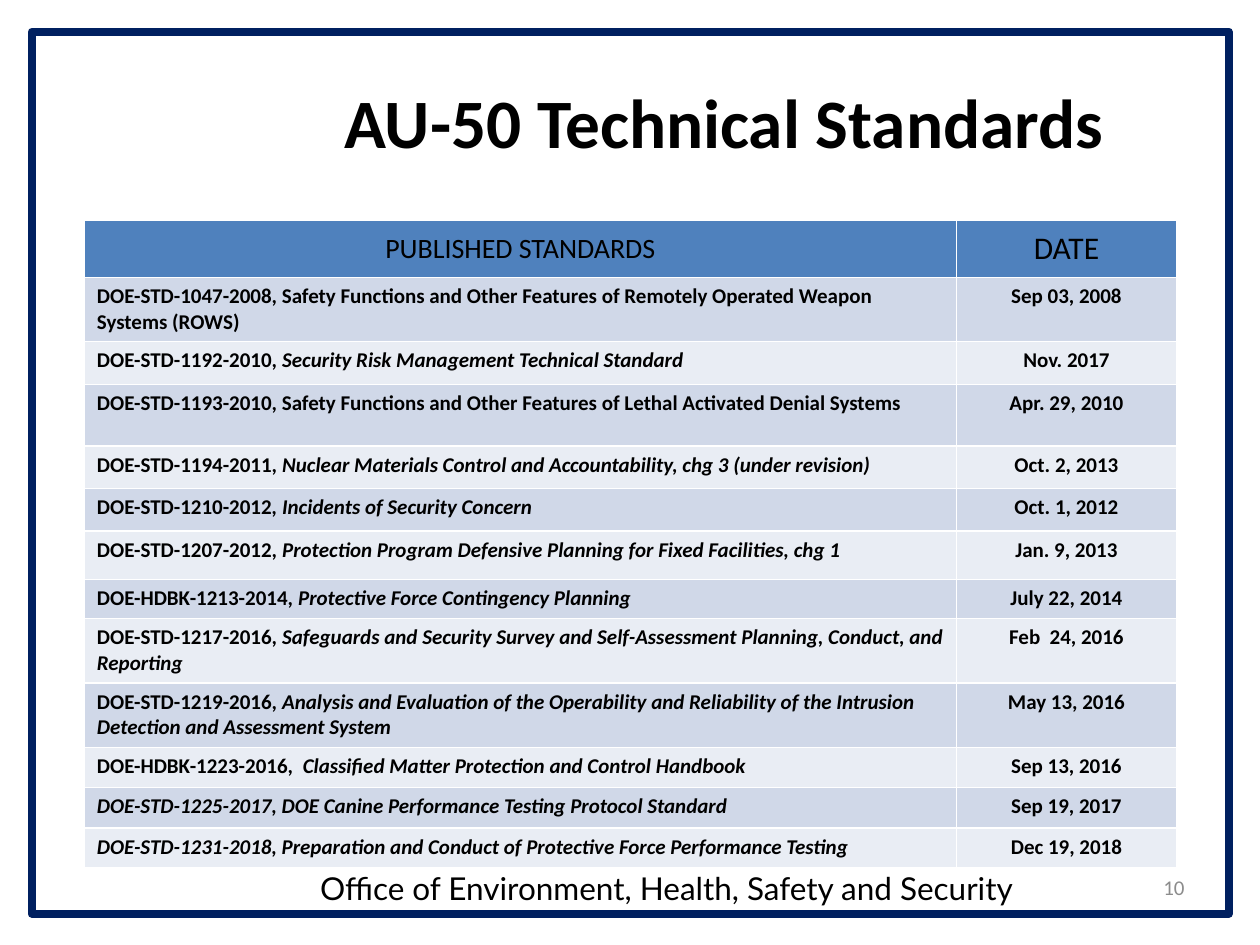
from dataclasses import dataclass

from pptx import Presentation, util as u
from pptx.dml.color import RGBColor
from pptx.enum import shapes, text

# Content
TITLE = "AU-50 Technical Standards"
FOOTER = "Office of Environment, Health, Safety and Security"
PAGE_NUMBER = "10"
HEADINGS = ("PUBLISHED STANDARDS", "DATE")
# Upright text, italic text, date, row height in cm
STANDARDS = [
    ("DOE-STD-1047-2008, Safety Functions and Other Features of Remotely Operated Weapon Systems (ROWS)",
     "", "Sep 03, 2008", 1.3),
    ("DOE-STD-1192-2010, ", "Security Risk Management Technical Standard", "Nov. 2017", 0.86),
    ("DOE-STD-1193-2010, Safety Functions and Other Features of Lethal Activated Denial Systems",
     "", "Apr. 29, 2010", 1.24),
    ("DOE-STD-1194-2011, ", "Nuclear Materials Control and Accountability, chg 3 (under revision)",
     "Oct. 2, 2013", 0.86),
    ("DOE-STD-1210-2012", ", Incidents of Security Concern", "Oct. 1, 2012", 0.86),
    ("DOE-STD-1207-2012, ", "Protection Program Defensive Planning for Fixed Facilities, chg 1",
     "Jan. 9, 2013", 0.97),
    ("DOE-HDBK-1213-2014, ", "Protective Force Contingency Planning", "July 22, 2014", 0.79),
    ("DOE-STD-1217-2016, ",
     "Safeguards and Security Survey and Self-Assessment Planning, Conduct, and Reporting",
     "Feb  24, 2016", 1.3),
    ("DOE-STD-1219-2016, ",
     "Analysis and Evaluation of the Operability and Reliability of the Intrusion "
     "Detection and Assessment System", "May 13, 2016", 1.3),
    ("DOE-HDBK-1223-2016,  ", "Classified Matter Protection and Control Handbook", "Sep 13, 2016", 0.81),
    ("", "DOE-STD-1225-2017, DOE Canine Performance Testing Protocol Standard", "Sep 19, 2017", 0.81),
    ("", "DOE-STD-1231-2018, Preparation and Conduct of Protective Force Performance Testing",
     "Dec 19, 2018", 0.81),
]
HEADER_HEIGHT = 1.14
COLUMN_WIDTHS = (17.58, 4.44)


@dataclass(frozen=True)
class Theme:
    body_font: str = "Calibri"
    footer_font: str = "Lato"
    ink: str = "000000"
    muted: str = "8C8C8C"
    frame: str = "002060"
    header: str = "4F81BD"
    bands: tuple = ("D0D8E8", "E9EDF4")
    title_size: float = 39.6
    footer_size: int = 18
    heading_sizes: tuple = (16, 18)
    small_size: int = 12


THEME = Theme()
ALIGN = text.PP_ALIGN
ANCHOR = text.MSO_ANCHOR


def cm(*lengths):
    return [u.Cm(length) for length in lengths]


def write(para, spans, size, align=ALIGN.CENTER, bold=False, color=THEME.ink, name=THEME.body_font):
    """Fill a paragraph with (words, italic) spans in one style."""
    para.alignment = align
    for words, italic in spans:
        if words:
            span = para.add_run()
            span.text = words
            if italic:
                span.font.italic = True
    font = para.font
    font.name, font.size, font.bold = name, u.Pt(size), bold
    font.color.rgb = RGBColor.from_string(color)


def add_label(page, place, words, size, anchor, **style):
    frame = page.shapes.add_textbox(*cm(*place)).text_frame
    frame.word_wrap = True
    frame.vertical_anchor = anchor
    write(frame.paragraphs[0], [(words, False)], size, **style)


def fill_cell(cell, color, spans, size, anchor=ANCHOR.TOP, **style):
    cell.fill.solid()
    cell.fill.fore_color.rgb = RGBColor.from_string(color)
    cell.vertical_anchor = anchor
    para = cell.text_frame.paragraphs[0]
    write(para, spans, size, **style)
    # Table styles set header weight, so state the weight on each span
    for span in para.runs:
        span.font.bold = para.font.bold
        span.font.color.rgb = para.font.color.rgb


def add_standards(page):
    heights = [HEADER_HEIGHT] + [row[-1] for row in STANDARDS]
    table = page.shapes.add_table(
        len(heights), len(COLUMN_WIDTHS),
        *cm(1.7, 4.45, sum(COLUMN_WIDTHS), sum(heights))).table
    for column, width in zip(table.columns, COLUMN_WIDTHS):
        column.width = u.Cm(width)
    for row, height in zip(table.rows, heights):
        row.height = u.Cm(height)

    for index, (heading, size) in enumerate(zip(HEADINGS, THEME.heading_sizes)):
        fill_cell(table.cell(0, index), THEME.header, [(heading, False)], size, ANCHOR.MIDDLE)
    for index, (upright, italic, date, _) in enumerate(STANDARDS):
        band = THEME.bands[index % 2]
        name_cell, date_cell = table.rows[index + 1].cells
        fill_cell(name_cell, band, [(upright, False), (italic, True)],
                  THEME.small_size, align=ALIGN.LEFT, bold=True)
        fill_cell(date_cell, band, [(date, False)], THEME.small_size, bold=True)


def main():
    deck = Presentation()
    deck.slide_width, deck.slide_height = cm(25.4, 19.05)
    page = deck.slides.add_slide(deck.slide_layouts[5])

    # Page frame
    border = page.shapes.add_shape(shapes.MSO_SHAPE.RECTANGLE, *cm(0.64, 0.64, 24.13, 17.78))
    border.shadow.inherit = False
    border.fill.background()
    border.line.color.rgb = RGBColor.from_string(THEME.frame)
    border.line.width = u.Pt(4.5)

    # Title
    title = page.shapes.title
    title.left, title.top, title.width, title.height = cm(4.88, 1.52, 19.43, 1.83)
    title.text_frame.vertical_anchor = ANCHOR.MIDDLE
    write(title.text_frame.paragraphs[0], [(TITLE, False)], THEME.title_size, bold=True)

    # Table, footer and page number
    add_standards(page)
    add_label(page, (5.72, 17.4, 15.44, 1.02), FOOTER, THEME.footer_size, ANCHOR.TOP,
              name=THEME.footer_font)
    add_label(page, (21.46, 17.37, 2.67, 1.02), PAGE_NUMBER, THEME.small_size, ANCHOR.MIDDLE,
              align=ALIGN.RIGHT, color=THEME.muted)

    deck.save("out.pptx")


if __name__ == "__main__":
    main()
